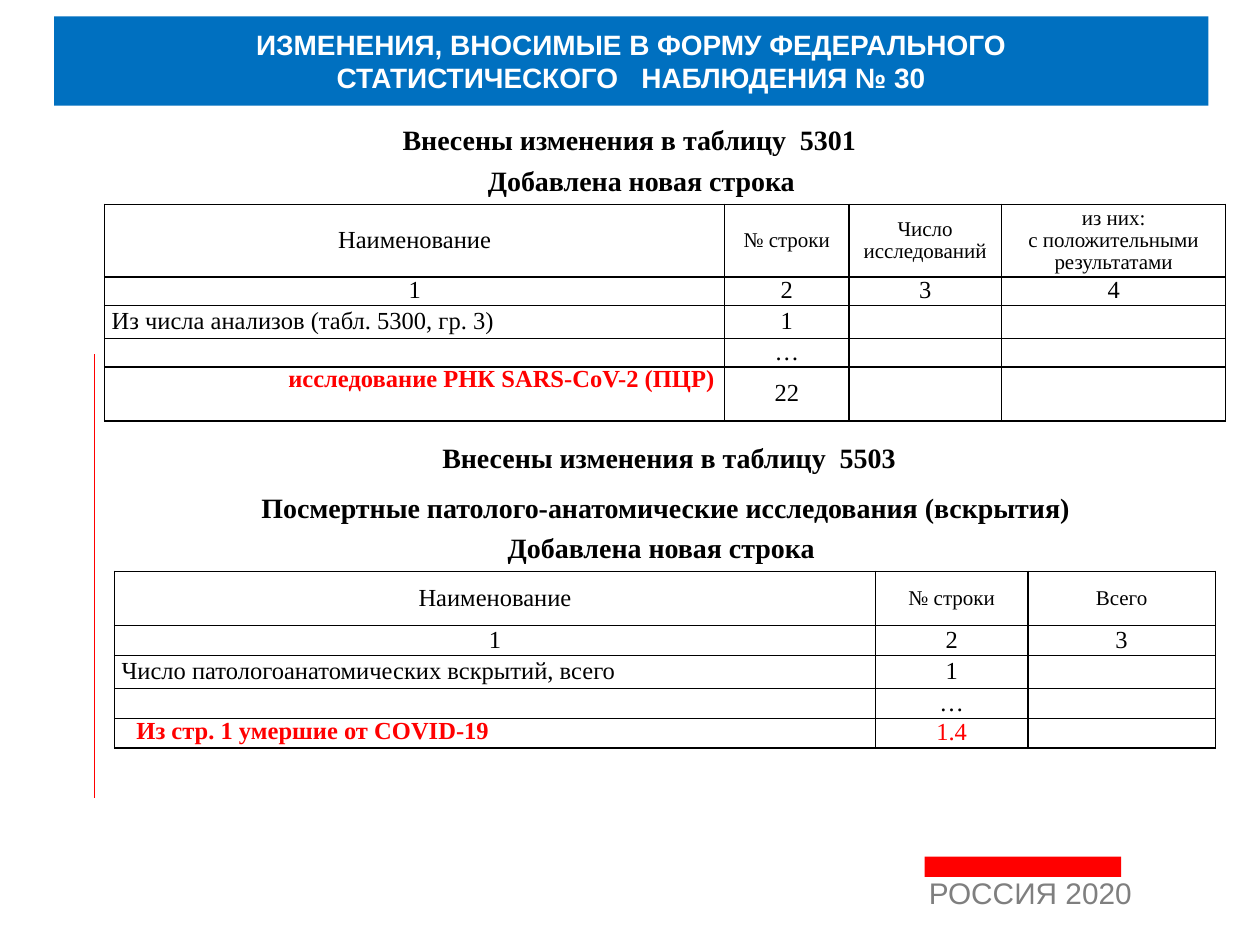
from pptx import Presentation
from pptx.dml.color import RGBColor
from pptx.enum import shapes, text
from pptx.oxml import parse_xml
from pptx.oxml.ns import nsdecls
from pptx.util import Cm, Pt

SERIF = "Times New Roman"
LEFT, MID, RIGHT = text.PP_ALIGN.LEFT, text.PP_ALIGN.CENTER, text.PP_ALIGN.RIGHT
TOP, CENTRE = text.MSO_ANCHOR.TOP, text.MSO_ANCHOR.MIDDLE


def style(frame, size, hue="000000", bold=False, face=SERIF, align=MID):
    """Format every paragraph and run of a text frame."""
    for para in frame.paragraphs:
        para.alignment = align
        for run in para.runs:
            run.font.size, run.font.bold, run.font.name = Pt(size), bold, face
            run.font.color.rgb = RGBColor.from_string(hue)


def border(cell):
    """Draw a thin black line on all four sides of a cell."""
    props = cell._tc.get_or_add_tcPr()
    for spot, side in enumerate(("lnL", "lnR", "lnT", "lnB")):
        props.insert(spot, parse_xml(
            f'<a:{side} {nsdecls("a")} w="12700"><a:solidFill>'
            f'<a:srgbClr val="000000"/></a:solidFill></a:{side}>'))


deck = Presentation()
deck.slide_width, deck.slide_height = Cm(25.4), Cm(19.05)
slide = deck.slides.add_slide(deck.slide_layouts[0])

# Banner
title = slide.shapes.title
title.left, title.top, title.width, title.height = Cm(1.09), Cm(0.33), Cm(23.27), Cm(1.8)
title.fill.solid()
title.fill.fore_color.rgb = RGBColor.from_string("0070C0")
frame = title.text_frame
frame.text = "ИЗМЕНЕНИЯ, ВНОСИМЫЕ В ФОРМУ ФЕДЕРАЛЬНОГО\nСТАТИСТИЧЕСКОГО   НАБЛЮДЕНИЯ № 30"
frame.auto_size, frame.vertical_anchor = text.MSO_AUTO_SIZE.NONE, CENTRE
style(frame, 16, "FFFFFF", True, "Arial")

# Footer with its red bar
foot = slide.placeholders[1]
foot.left, foot.top, foot.width, foot.height = Cm(18.47), Cm(17.65), Cm(4.78), Cm(1.19)
foot.text_frame.text = "РОССИЯ 2020"
foot.text_frame.auto_size = text.MSO_AUTO_SIZE.NONE
foot.text_frame.paragraphs[0].line_spacing = 0.8
style(foot.text_frame, 17, "7F7F7F", face="Arial", align=LEFT)
bar = slide.shapes.add_shape(shapes.MSO_SHAPE.RECTANGLE, Cm(18.64), Cm(17.27), Cm(3.96), Cm(0.41))
bar.shadow.inherit = False
bar.fill.solid()
bar.fill.fore_color.rgb = RGBColor.from_string("FF0000")
bar.line.fill.background()

# Margin line
rule = slide.shapes.add_connector(
    shapes.MSO_CONNECTOR.STRAIGHT, Cm(1.91), Cm(7.14), Cm(1.91), Cm(16.08))
rule.line.color.rgb = RGBColor.from_string("FF0000")
rule.line.width = Pt(0.75)
rule._element.spPr.append(parse_xml(f'<a:effectLst {nsdecls("a")}/>'))

# Headings: centre x, centre y, wording
heads = [
    (12.69, 2.8, "Внесены изменения в таблицу  5301"),
    (12.93, 3.63, "Добавлена новая строка"),
    (13.49, 9.21, "Внесены изменения в таблицу  5503"),
    (13.42, 10.22, "Посмертные патолого-анатомические исследования (вскрытия)"),
    (13.33, 11.03, "Добавлена новая строка"),
]
wide, high = 22.6, 0.94
for x, y, words in heads:
    box = slide.shapes.add_textbox(Cm(x - wide / 2), Cm(y - high / 2), Cm(wide), Cm(high))
    frame = box.text_frame
    frame.word_wrap, frame.vertical_anchor = True, CENTRE
    frame.text = words
    style(frame, 16, bold=True)

# Tables: left, top, column widths, row heights, cells, look of the new row
# (alignment, side margin, colour of its number)
tables = [
    (2.11, 4.12, [12.5, 2.5, 3.08, 4.52], [1.41, 0.55, 0.67, 0.55, 1.09], [
        ["Наименование", "№ строки", "Число исследований", "из них:\nс положительными результатами"],
        ["1", "2", "3", "4"],
        ["Из числа анализов (табл. 5300, гр. 3)", "1", "", ""],
        ["", "…", "", ""],
        ["исследование РНК SARS-CoV-2 (ПЦР)", "22", "", ""],
    ], (RIGHT, 0.2, "000000")),
    (2.31, 11.52, [15.34, 3.07, 3.78], [1.09, 0.6, 0.67, 0.6, 0.6], [
        ["Наименование", "№ строки", "Всего"],
        ["1", "2", "3"],
        ["Число патологоанатомических вскрытий, всего", "1", ""],
        ["", "…", ""],
        ["Из стр. 1 умершие от COVID-19", "1.4", ""],
    ], (LEFT, 0.44, "FF0000")),
]
for x, y, cols, rows, cells, (align, pad, hue) in tables:
    grid = slide.shapes.add_table(
        len(rows), len(cols), Cm(x), Cm(y), Cm(sum(cols)), Cm(sum(rows))).table
    grid.first_row = grid.horz_banding = False
    for col, size in zip(grid.columns, cols):
        col.width = Cm(size)
    for r, row in enumerate(cells):
        grid.rows[r].height = Cm(rows[r])
        for c, words in enumerate(row):
            cell = grid.cell(r, c)
            fresh = r == len(rows) - 1
            name = fresh and c == 0
            cell.fill.background()
            border(cell)
            cell.margin_top = cell.margin_bottom = 0
            cell.margin_left = cell.margin_right = Cm(pad if name else 0.14)
            cell.vertical_anchor = TOP if name else CENTRE
            frame = cell.text_frame
            frame.text = words
            side = align if name else LEFT if r == 2 and c == 0 else MID
            tone = "FF0000" if name else hue if fresh else "000000"
            style(frame, 12 if r == 0 and c else 14, tone, name, align=side)
            for para in frame.paragraphs:
                para.line_spacing = 0.96
                if not words:
                    para._p.get_or_add_endParaRPr().set("sz", "1200")

deck.save("out.pptx")
